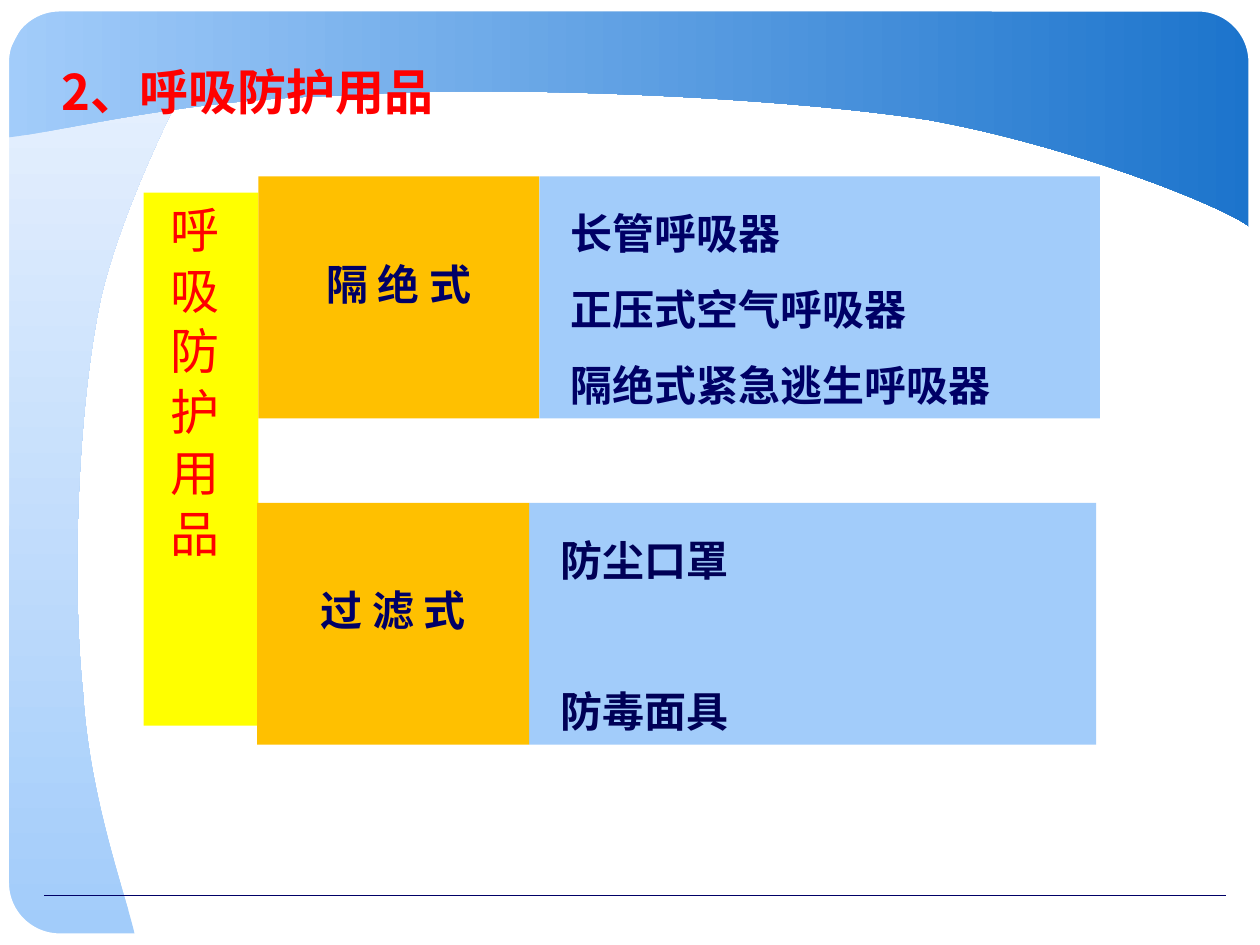
from dataclasses import dataclass

from lxml import etree
from pptx import Presentation
from pptx import util as u
from pptx.dml.color import RGBColor
from pptx.enum import shapes, text
from pptx.oxml.ns import qn

CELL = u.Inches(0.1)  # the slide is a grid of 100 columns and 75 rows
COLUMNS, ROWS = 100, 75


@dataclass(frozen=True)
class Theme:
    font: str = "Noto Sans CJK SC"
    white: str = "FFFFFF"
    sky: str = "A2CCFA"
    mist: str = "EAF2FE"
    ocean: str = "1C74CC"
    navy: str = "000066"
    deep_navy: str = "000056"
    red: str = "FF0000"
    yellow: str = "FFFF00"
    orange: str = "FFC000"
    heading: int = 28
    label: int = 24
    line_spacing: float = 1.5


@dataclass(frozen=True)
class Area:
    column: float
    row: float
    width: float
    height: float

    def place(self, shape) -> None:
        shape.left, shape.top = cells(self.column), cells(self.row)
        shape.width, shape.height = cells(self.width), cells(self.height)


@dataclass(frozen=True)
class Outline:
    """A start point, then line ends (2 numbers) or cubic curves (6 numbers)."""
    start: tuple
    segments: tuple
    colors: tuple
    angle: int = 0


@dataclass(frozen=True)
class Category:
    name: str
    items: tuple
    label_area: Area
    list_area: Area
    list_color: str
    item_gap: int


THEME = Theme()

OUTLINES = (
    Outline((10.7, 74.2),
            ((10, 71, 7.1, 63.4, 6.6, 55), (5.7, 46.6, 6.1, 32.8, 8, 23.7),
             (10, 15.1, 16.5, 2.6, 17.9, 1.7), (0.6, 1.7), (0.5, 74.2)),
            (THEME.sky, THEME.mist), 90),
    Outline((0.7, 10.9),
            ((5.1, 10.4, 14.9, 7.8, 27.1, 7.6), (38.6, 6.7, 61.2, 7.6, 73.6, 9.5),
             (85.4, 11.6, 98.2, 16.8, 99.4, 18.2), (99.5, 0.8), (0.7, 0.7)),
            (THEME.sky, THEME.ocean)),
)
CORNERS = (
    Outline((4.8, 74.9), ((1.9, 73.5), (0.5, 72), (0, 69.8), (0, 75)), (THEME.white,)),
    Outline((0, 5.5), ((0.4, 4.9, 1.3, 2.6, 2.1, 1.7), (2.8, 0.8, 5, 0.4, 4.8, 0), (0, 0.1)),
            (THEME.white,)),
    Outline((99.9, 70), ((98.7, 72.5), (97.1, 74.1), (95.6, 75), (100, 74.9)), (THEME.white,)),
    Outline((95.1, 0.1), ((95.6, 0.3, 97.2, 0.2, 98.6, 1.7), (99.9, 3.2, 99.7, 6, 99.9, 5.7),
                          (99.9, 0.1)), (THEME.white,)),
)
CATEGORIES = (
    Category("隔 绝 式", ("长管呼吸器", "正压式空气呼吸器", "隔绝式紧急逃生呼吸器"),
             Area(20.5, 14, 22.3, 19.2), Area(42.8, 14, 44.5, 19.2), THEME.navy, 0),
    Category("过 滤 式", ("防尘口罩", "防毒面具"),
             Area(20.4, 39.9, 21.6, 19.2), Area(42, 39.9, 45, 19.2), THEME.deep_navy, 43),
)


def cells(count: float) -> u.Emu:
    return u.Emu(round(count * CELL))


def rgb(color: str) -> RGBColor:
    return RGBColor.from_string(color)


def bend(shape, segments: tuple) -> None:
    """Join each three straight steps that stand for a curve into one cubic curve."""
    steps = iter(list(shape.element.iter(qn("a:lnTo"))))
    for segment in segments:
        first = next(steps)
        if len(segment) == 2:
            continue
        first.tag = qn("a:cubicBezTo")
        for step in (next(steps), next(steps)):
            first.append(step[0])
            step.getparent().remove(step)


def draw_outline(page, outline: Outline) -> None:
    points = [(cells(x), cells(y)) for segment in outline.segments
              for x, y in zip(segment[::2], segment[1::2])]
    builder = page.shapes.build_freeform(*map(cells, outline.start))
    builder.add_line_segments(points, close=True)
    shape = builder.convert_to_shape()
    bend(shape, outline.segments)
    shape.shadow.inherit = False
    shape.line.fill.background()
    if len(outline.colors) == 1:
        paint(shape, outline.colors[0])
        return
    shape.fill.gradient()
    shape.fill.gradient_angle = outline.angle
    for stop, color in zip(shape.fill.gradient_stops, outline.colors):
        stop.color.rgb = rgb(color)


def paint(shape, color: str) -> None:
    shape.fill.solid()
    shape.fill.fore_color.rgb = rgb(color)


def draw_rectangle(page, area: Area, color: str):
    box = page.shapes.add_shape(shapes.MSO_SHAPE.RECTANGLE, 0, 0, 0, 0)
    area.place(box)
    box.shadow.inherit = False
    box.line.fill.background()
    paint(box, color)
    return box


def draw_frame(page) -> None:
    frame = page.shapes.add_shape(shapes.MSO_SHAPE.ROUNDED_RECTANGLE, 0, 0, 0, 0)
    Area(0.3, 0.5, 99.2, 74).place(frame)
    frame.adjustments[0] = 0.06
    frame.shadow.inherit = False
    frame.fill.background()
    frame.line.color.rgb = rgb(THEME.white)
    frame.line.width = u.Pt(6)


def draw_footer_line(page) -> None:
    line = page.shapes.add_connector(shapes.MSO_CONNECTOR.STRAIGHT, cells(3.5), cells(71.1),
                                     cells(97.3), cells(71.1))
    line.line.color.rgb = rgb(THEME.navy)
    line.line.width = u.Pt(0.75)
    etree.SubElement(line.element.spPr, qn("a:effectLst"))


def write(shape, lines: tuple, size: int, color: str, bold: bool = True,
          align=text.PP_ALIGN.LEFT, spacing: float = THEME.line_spacing, gap: int = 0) -> None:
    frame = shape.text_frame
    frame.word_wrap = True
    frame.auto_size = text.MSO_AUTO_SIZE.NONE
    frame.text = "\n".join(lines)
    for index, para in enumerate(frame.paragraphs):
        properties = para._p.get_or_add_pPr()
        properties.set("marL", "0")
        properties.set("indent", "0")
        etree.SubElement(properties, qn("a:buNone"))
        para.alignment = align
        para.line_spacing = spacing
        para.space_before = u.Pt(gap if index else 0)
        for span in para.runs:
            span.font.size = u.Pt(size)
            span.font.bold = bold
            span.font.color.rgb = rgb(color)
            span.font.name = THEME.font
            etree.SubElement(span.font._element, qn("a:ea"), typeface=THEME.font)


def draw_category(page, category: Category, list_box) -> None:
    label = draw_rectangle(page, category.label_area, THEME.orange)
    label.text_frame.vertical_anchor = text.MSO_ANCHOR.TOP
    label.text_frame.margin_top = cells(4.5)
    write(label, (category.name,), THEME.label, THEME.navy, align=text.PP_ALIGN.CENTER)

    category.list_area.place(list_box)
    paint(list_box, THEME.sky)
    list_box.text_frame.vertical_anchor = text.MSO_ANCHOR.TOP
    list_box.text_frame.margin_left = cells(2.5)
    write(list_box, category.items, THEME.label, category.list_color, gap=category.item_gap)


def draw_spine(page) -> None:
    """The vertical heading that joins the categories."""
    spine = draw_rectangle(page, Area(11.4, 15.3, 9.1, 42.3), THEME.yellow)
    frame = spine.text_frame
    frame.vertical_anchor = text.MSO_ANCHOR.TOP
    frame.margin_left = frame.margin_right = frame.margin_top = frame.margin_bottom = cells(1)
    frame._txBody.bodyPr.set("vert", "eaVert")
    write(spine, ("呼 吸 防 护 用 品",), THEME.heading, THEME.red, bold=False)


def main() -> None:
    deck = Presentation()
    deck.slide_width, deck.slide_height = cells(COLUMNS), cells(ROWS)
    page = deck.slides.add_slide(deck.slide_layouts[3])
    title, *list_boxes = page.placeholders
    for outline in OUTLINES:
        draw_outline(page, outline)
    draw_footer_line(page)
    draw_frame(page)
    for corner in CORNERS:
        draw_outline(page, corner)
    for placeholder in (title, *list_boxes):
        page.shapes.element.append(placeholder.element)  # bring to front
    Area(3.9, 2.8, 92.2, 8.8).place(title)
    title.text_frame.vertical_anchor = text.MSO_ANCHOR.MIDDLE
    write(title, ("2、呼吸防护用品",), THEME.heading, THEME.red, spacing=1.0)
    draw_spine(page)
    for category, list_box in zip(CATEGORIES, list_boxes):
        draw_category(page, category, list_box)
    deck.save("out.pptx")


if __name__ == "__main__":
    main()
